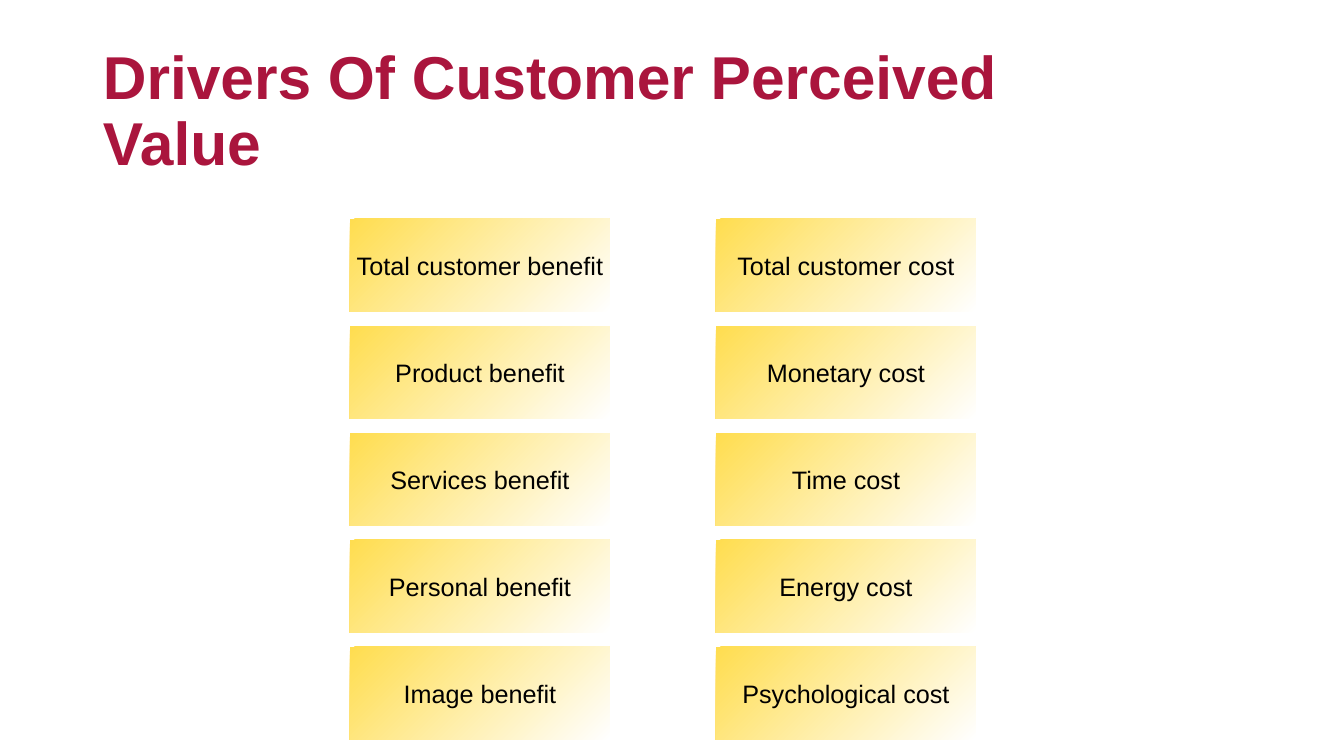
import pptx
import pptx.dml.color
import pptx.enum.shapes
import pptx.enum.text
import pptx.util

TITLE = "Drivers Of Customer Perceived Value"
DRIVERS = {
    "benefits": ["Total customer benefit", "Product benefit", "Services benefit",
                 "Personal benefit", "Image benefit"],
    "costs": ["Total customer cost", "Monetary cost", "Time cost",
              "Energy cost", "Psychological cost"],
}

THEME = {
    "font": "Arial",
    "title_color": "AA153D",
    "title_size": 43.2,
    "driver_color": "000000",
    "driver_size": 18,
    "gradient": ("FFDD4F", "FFFFFF"),
}

# Lengths in px
SLIDE_SIZE = (1344, 756)
TITLE_AREA = (93, 40, 963, 146)
GRID_LEFT, GRID_TOP = 350, 219
COLUMN_STEP, ROW_STEP = 366, 107
DRIVER_WIDTH, DRIVER_HEIGHT = 260, 93
PX_PER_INCH = 100.8


def px(length):
    return pptx.util.Inches(length / PX_PER_INCH)


def rgb(code):
    return pptx.dml.color.RGBColor.from_string(code)


def write(shape, text, role, align, wrap, bold=False):
    frame = shape.text_frame
    frame.word_wrap = wrap
    frame.vertical_anchor = pptx.enum.text.MSO_ANCHOR.MIDDLE
    paragraph = frame.paragraphs[0]
    paragraph.alignment = align
    run = paragraph.add_run()
    run.text = text
    run.font.name = THEME["font"]
    run.font.size = pptx.util.Pt(THEME[role + "_size"])
    run.font.color.rgb = rgb(THEME[role + "_color"])
    run.font.bold = bold
    return paragraph


def add_title(slide):
    title = slide.shapes.add_textbox(*map(px, TITLE_AREA))
    paragraph = write(title, TITLE, "title", pptx.enum.text.PP_ALIGN.LEFT,
                      wrap=True, bold=True)
    paragraph.line_spacing = 0.9


def add_driver(slide, name, column, row):
    driver = slide.shapes.add_shape(
        pptx.enum.shapes.MSO_SHAPE.RECTANGLE,
        px(GRID_LEFT + column * COLUMN_STEP), px(GRID_TOP + row * ROW_STEP),
        px(DRIVER_WIDTH), px(DRIVER_HEIGHT))
    driver.shadow.inherit = False
    driver.line.fill.background()
    driver.fill.gradient()
    driver.fill.gradient_angle = 315  # counter-clockwise: top left to bottom right
    for stop, position, color in zip(driver.fill.gradient_stops, (0, 1), THEME["gradient"]):
        stop.position = position
        stop.color.rgb = rgb(color)
    write(driver, name, "driver", pptx.enum.text.PP_ALIGN.CENTER, wrap=False)


def main():
    deck = pptx.Presentation()
    deck.slide_width, deck.slide_height = map(px, SLIDE_SIZE)
    slide = deck.slides.add_slide(deck.slide_layouts[6])
    add_title(slide)
    for column, names in enumerate(DRIVERS.values()):
        for row, name in enumerate(names):
            add_driver(slide, name, column, row)
    deck.save("out.pptx")


if __name__ == "__main__":
    main()
